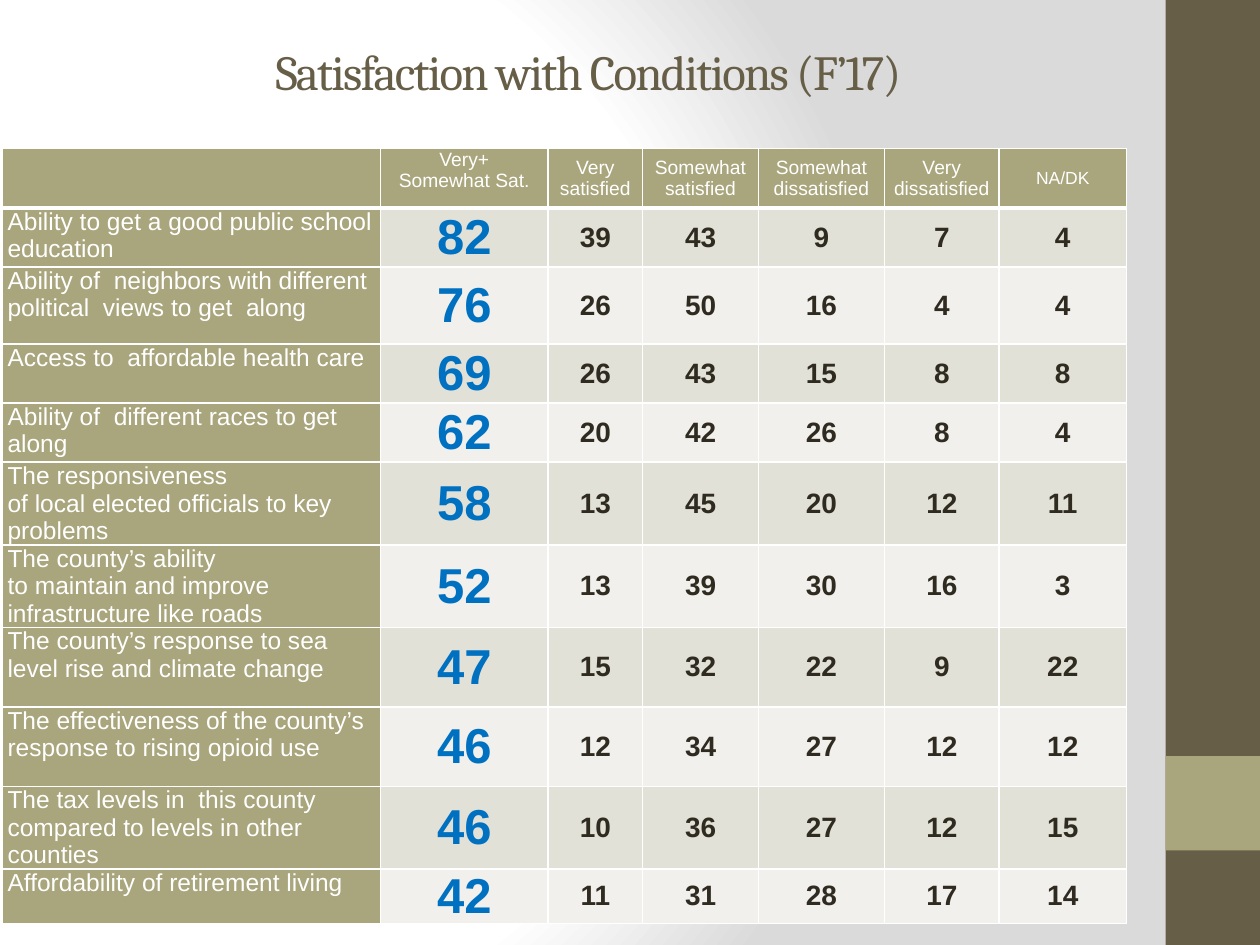
"""Build the slide 'Satisfaction with Conditions' with its survey table."""
from pptx import Presentation
from pptx.dml.color import RGBColor
from pptx.enum.shapes import MSO_SHAPE
from pptx.enum.text import MSO_ANCHOR, PP_ALIGN
from pptx.oxml import parse_xml
from pptx.oxml.ns import nsdecls, qn
from pptx.util import Inches, Pt

COLORS = {
    "white": "FFFFFF", "gray": "DADADA", "brown": "675E47", "olive": "A9A57C",
    "odd": "E2E1D7", "even": "F1F0EC", "blue": "0070C0", "ink": "2F2B20",
}
TITLE = "Satisfaction with Conditions (F’17)"
HEADER = ["", "Very+\nSomewhat Sat.", "Very\nsatisfied", "Somewhat\nsatisfied",
          "Somewhat\ndissatisfied", "Very\ndissatisfied", "NA/DK"]
ROWS = [
    ("Ability to get a good public school education", 82, 39, 43, 9, 7, 4),
    ("Ability of  neighbors with different political  views to get  along",
     76, 26, 50, 16, 4, 4),
    ("Access to  affordable health care", 69, 26, 43, 15, 8, 8),
    ("Ability of  different races to get along", 62, 20, 42, 26, 8, 4),
    ("The responsiveness\nof local elected officials to key problems",
     58, 13, 45, 20, 12, 11),
    ("The county’s ability\nto maintain and improve\ninfrastructure like roads",
     52, 13, 39, 30, 16, 3),
    ("The county’s response to sea level rise and climate change",
     47, 15, 32, 22, 9, 22),
    ("The effectiveness of the county’s response to rising opioid use",
     46, 12, 34, 27, 12, 12),
    ("The tax levels in  this county compared to levels in other counties",
     46, 10, 36, 27, 12, 15),
    ("Affordability of retirement living", 42, 11, 31, 28, 17, 14),
]
COL_WIDTHS = [3, 1.33, 0.75, 0.92, 1, 0.91, 1.01]
ROW_HEIGHTS = [0.47, 0.47, 0.61, 0.47, 0.47, 0.63, 0.59, 0.63, 0.63, 0.63, 0.37]
SIDEBAR = [(0, 7.5, "brown"), (6, 0.75, "olive")]


def rgb(name):
    return RGBColor.from_string(COLORS[name])


def add_run(p, text, font, size, color, bold=False):
    r = p.add_run()
    r.text = text
    r.font.name, r.font.size, r.font.bold = font, Pt(size), bold
    r.font.color.rgb = rgb(color)
    return r


def set_background(s):
    s.background.fill.solid()
    bg = s.background.fill._xPr
    stops = "".join(
        f'<a:gs pos="{pos * 1000}"><a:srgbClr val="{COLORS[name]}"/></a:gs>'
        for pos, name in [(0, "white"), (75, "white"), (100, "gray")])
    bg.replace(bg.find(qn("a:solidFill")), parse_xml(
        f'<a:gradFill {nsdecls("a")} rotWithShape="1"><a:gsLst>{stops}</a:gsLst>'
        '<a:path path="circle"><a:fillToRect l="20000" t="50000" r="100000" '
        'b="50000"/></a:path></a:gradFill>'))


def add_sidebar(s):
    for top, height, color in SIDEBAR:
        sp = s.shapes.add_shape(MSO_SHAPE.RECTANGLE, Inches(9.25), Inches(top),
                                Inches(0.75), Inches(height))
        sp.shadow.inherit = False
        sp.fill.solid()
        sp.fill.fore_color.rgb = rgb(color)
        sp.line.fill.background()


def format_title(sp):
    sp.left, sp.top, sp.width, sp.height = map(Inches, (0.67, 0.17, 8, 0.78))
    tf = sp.text_frame
    tf.vertical_anchor = MSO_ANCHOR.MIDDLE
    p = tf.paragraphs[0]
    p.alignment = PP_ALIGN.CENTER
    r = add_run(p, TITLE, "Cambria", 28, "brown")
    r.font._element.set("spc", "-100")


def cell_style(row, col):
    """Return fill, text size, text colour and bold for a table position."""
    if row == 0:
        return "olive", 10 if col == 6 else 11, "white", False
    if col == 0:
        return "olive", 14, "white", False
    band = "odd" if row % 2 else "even"
    return (band, 28, "blue", True) if col == 1 else (band, 16, "ink", True)


def set_borders(cell, bottom):
    tc_pr = cell._tc.get_or_add_tcPr()
    for side, width in (("L", 1), ("R", 1), ("T", 1), ("B", bottom)):
        tc_pr.append(parse_xml(
            f'<a:ln{side} {nsdecls("a")} w="{Pt(width)}"><a:solidFill>'
            f'<a:srgbClr val="{COLORS["white"]}"/></a:solidFill></a:ln{side}>'))


def fill_cell(cell, row, col, text):
    fill, size, color, bold = cell_style(row, col)
    set_borders(cell, 1 if row else 3)
    cell.fill.solid()
    cell.fill.fore_color.rgb = rgb(fill)
    cell.margin_left = cell.margin_right = Inches(0.04)
    cell.margin_top = cell.margin_bottom = 0
    top = col == 0 or (row, col) == (0, 1)
    cell.vertical_anchor = MSO_ANCHOR.TOP if top else MSO_ANCHOR.MIDDLE
    if not text:
        return
    tf = cell.text_frame
    for i, line in enumerate(text.split("\n")):
        p = tf.add_paragraph() if i else tf.paragraphs[0]
        p.alignment = PP_ALIGN.CENTER if col else PP_ALIGN.LEFT
        add_run(p, line, "Arial", size, color, bold)


def add_survey_table(s):
    data = [HEADER, *ROWS]
    table = s.shapes.add_table(
        len(data), len(HEADER), Inches(0.02), Inches(1.18),
        Inches(sum(COL_WIDTHS)), Inches(sum(ROW_HEIGHTS))).table
    for column, width in zip(table.columns, COL_WIDTHS):
        column.width = Inches(width)
    for i, (values, height) in enumerate(zip(data, ROW_HEIGHTS)):
        table.rows[i].height = Inches(height)
        for j, value in enumerate(values):
            fill_cell(table.cell(i, j), i, j, str(value))


def main():
    prs = Presentation()
    prs.slide_width, prs.slide_height = Inches(10), Inches(7.5)
    s = prs.slides.add_slide(prs.slide_layouts[5])
    set_background(s)
    add_sidebar(s)
    format_title(s.shapes.title)
    add_survey_table(s)
    prs.save("out.pptx")


if __name__ == "__main__":
    main()
